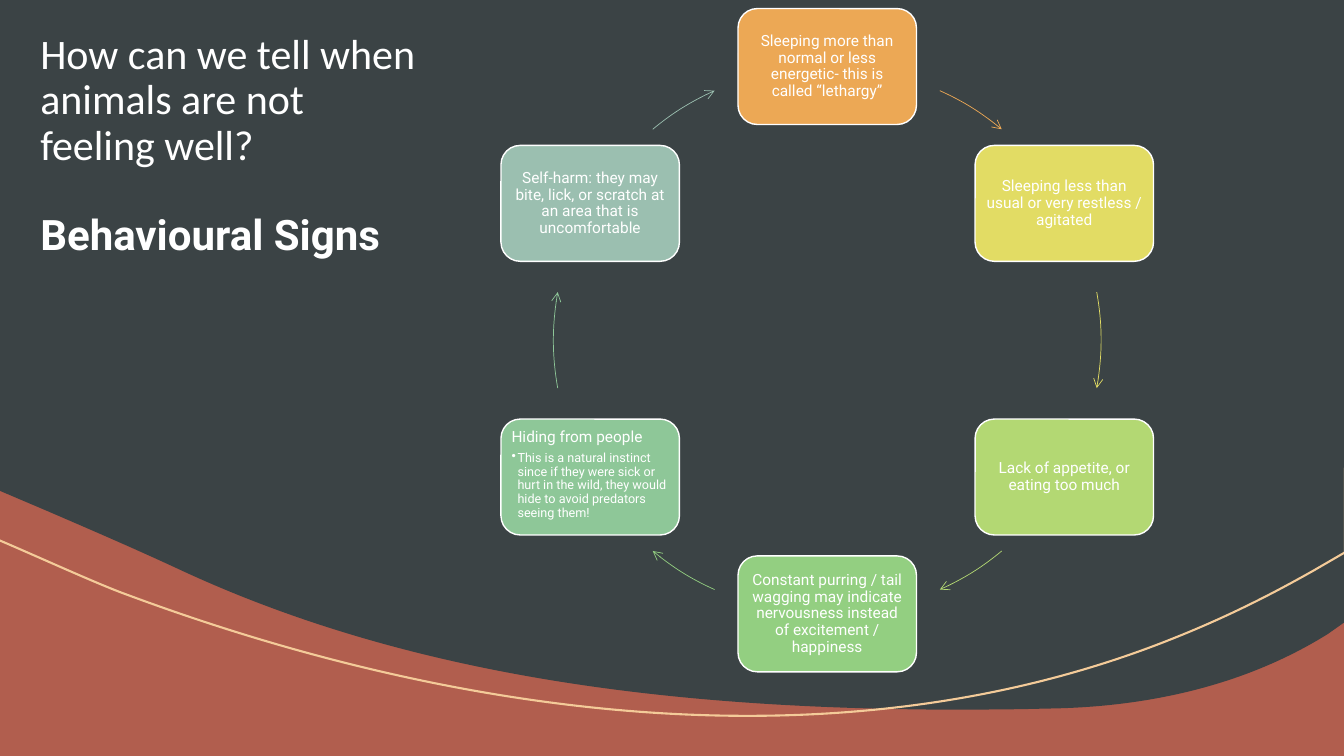
import math
from dataclasses import dataclass

from lxml import etree
from pptx import Presentation
from pptx import util as u
from pptx.dml import color
from pptx.enum import shapes, text
from pptx.oxml import ns

Point = tuple[float, float]
Segment = list[Point]


@dataclass
class Frame:
    left: float
    top: float
    width: float
    height: float


@dataclass
class Sign:
    label: str
    fill: str
    arrow_start: float
    arrow_end: float
    detail: str = ""


SLIDE = Frame(0, 0, 13.33, 7.5)
RING = Frame(5.49, 0.66, 5.43, 5.43)
RADIUS = RING.width / 2
BOX_WIDTH, BOX_HEIGHT = 1.77, 1.15
LABEL_WIDTH, LABEL_HEIGHT = 1.66, 1.04
WHITE, DARK, RED, SAND = "FFFFFF", "3B4345", "B15E4E", "F4CB99"

SIGNS = [
    Sign("Sleeping more than normal or less energetic- this is called “lethargy”",
         "ECA855", 24.3, 39.6),
    Sign("Sleeping less than usual or very restless / agitated", "E2DC64", 79.9, 100.1),
    Sign("Lack of appetite, or eating too much", "B3D873", 140.4, 155.7),
    Sign("Constant purring / tail wagging may indicate nervousness instead of "
         "excitement / happiness", "93CF81", 204.3, 219.6),
    Sign("Hiding from people", "8EC798", 259.9, 280.1,
         "This is a natural instinct since if they were sick or hurt in the wild, "
         "they would hide to avoid predators seeing them!"),
    Sign("Self-harm: they may bite, lick, or scratch at an area that is uncomfortable",
         "9BBFB0", 320.4, 335.7),
]

HILL_FRAME = Frame(0, 0, 13.34, 7.04)
HILL: list[Segment] = [
    [(0, 0)], [(13.34, 0)], [(13.34, 6.17)], [(13.17, 6.29)],
    [(12.32, 6.82), (11.33, 7.02), (10.37, 7.03)],
    [(10.02, 7.04), (9.66, 7.04), (9.3, 7.04)],
    [(6.77, 7.02), (4.14, 6.75), (1.78, 5.65)],
    [(1.35, 5.45), (0.91, 5.26), (0.47, 5.07)],
    [(0, 4.87)],
]
SWOOSH_FRAME = Frame(-0.03, 4.64, 13.37, 2.47)
SWOOSH: list[Segment] = [
    [(13.34, 4.64)], [(13.34, 5.48)], [(13.03, 5.66)],
    [(12.64, 5.88), (12.2, 6.11), (11.62, 6.34)],
    [(8.41, 7.62), (4.65, 7.16), (1.26, 5.9)],
    [(0.98, 5.8), (0.37, 5.52), (-0.03, 5.35)],
]


def rgb(value: str) -> color.RGBColor:
    return color.RGBColor.from_string(value)


def on_ring(degrees: float) -> Point:
    angle = math.radians(degrees)
    return (RING.left + RADIUS * (1 + math.sin(angle)),
            RING.top + RADIUS * (1 - math.cos(angle)))


def ring_arc(start: float, end: float) -> list[Segment]:
    first, last = math.radians(start), math.radians(end)
    reach = RADIUS * 4 / 3 * math.tan((last - first) / 4)
    (x1, y1), (x2, y2) = on_ring(start), on_ring(end)
    return [[(x1, y1)],
            [(x1 + reach * math.cos(first), y1 + reach * math.sin(first)),
             (x2 - reach * math.cos(last), y2 - reach * math.sin(last)), (x2, y2)]]


def centered(center: Point, width: float, height: float) -> list[int]:
    x, y = center
    return [u.Inches(value) for value in (x - width / 2, y - height / 2, width, height)]


def paint(shape, *, fill: str = "", line: str = "", width: float = 1) -> None:
    shape.shadow.inherit = False
    if fill:
        shape.fill.solid()
        shape.fill.fore_color.rgb = rgb(fill)
    else:
        shape.fill.background()
    if line:
        shape.line.color.rgb = rgb(line)
        shape.line.width = u.Pt(width)
    else:
        shape.line.fill.background()


def add_outline(slide, frame: Frame, segments: list[Segment], *, fill: str = "",
                line: str = "", width: float = 1, arrow: bool = False):
    left, top = u.Inches(frame.left), u.Inches(frame.top)
    right, bottom = left + u.Inches(frame.width), top + u.Inches(frame.height)
    builder = slide.shapes.build_freeform(left, top)
    builder.add_line_segments([(right, bottom)], close=False)
    shape = builder.convert_to_shape()
    outline = next(shape._element.iter(ns.qn("a:path")))
    for child in list(outline):
        outline.remove(child)
    for index, segment in enumerate(segments):
        command = "moveTo" if index == 0 else "cubicBezTo" if len(segment) == 3 else "lnTo"
        step = etree.SubElement(outline, ns.qn(f"a:{command}"))
        for x, y in segment:
            etree.SubElement(step, ns.qn("a:pt"), x=str(u.Inches(x) - left),
                             y=str(u.Inches(y) - top))
    if fill:
        etree.SubElement(outline, ns.qn("a:close"))
    paint(shape, fill=fill, line=line, width=width)
    if arrow:
        etree.SubElement(shape.line._get_or_add_ln(), ns.qn("a:tailEnd"), type="arrow")
    return shape


def write(paragraph, wording: str, *, size: float, font: str = "Roboto",
          bold: bool = False, align=text.PP_ALIGN.LEFT, before: float = 0,
          after: float = 0, bullet: str = "") -> None:
    if bullet:
        properties = paragraph._p.get_or_add_pPr()
        properties.set("marL", str(u.Inches(0.06)))
        properties.set("indent", str(-u.Inches(0.06)))
        etree.SubElement(properties, ns.qn("a:buChar"), char=bullet)
        paragraph.level = 1
    paragraph.alignment = align
    paragraph.line_spacing = 0.9
    paragraph.space_before = u.Pt(before)
    paragraph.space_after = u.Pt(after)
    run = paragraph.add_run()
    run.text = wording
    run.font.name = font
    run.font.size = u.Pt(size)
    run.font.bold = bold
    run.font.color.rgb = rgb(WHITE)


def add_title(slide) -> None:
    title = slide.shapes.title
    title.left, title.top = u.Inches(0.3), u.Inches(0.28)
    title.width, title.height = u.Inches(3.94), u.Inches(2.5)
    frame = title.text_frame
    frame.word_wrap = True
    frame.auto_size = text.MSO_AUTO_SIZE.NONE
    frame.vertical_anchor = text.MSO_ANCHOR.TOP
    write(frame.paragraphs[0], "How can we tell when animals are not feeling well?",
          size=30, font="Calibri")
    write(frame.add_paragraph(), "Behavioural Signs", size=30, bold=True, before=32)


def add_sign(slide, sign: Sign, degrees: float) -> None:
    center = on_ring(degrees)
    box = slide.shapes.add_shape(shapes.MSO_SHAPE.ROUNDED_RECTANGLE,
                                 *centered(center, BOX_WIDTH, BOX_HEIGHT))
    paint(box, fill=sign.fill, line=WHITE)

    label = slide.shapes.add_textbox(*centered(center, LABEL_WIDTH, LABEL_HEIGHT))
    frame = label.text_frame
    frame.word_wrap = True
    frame.margin_left = frame.margin_right = u.Inches(0.05)
    frame.margin_top = frame.margin_bottom = u.Inches(0.05)
    frame.vertical_anchor = text.MSO_ANCHOR.TOP if sign.detail else text.MSO_ANCHOR.MIDDLE
    align = text.PP_ALIGN.LEFT if sign.detail else text.PP_ALIGN.CENTER
    write(frame.paragraphs[0], sign.label, size=11, align=align,
          after=3.85 if sign.detail else 0)
    if sign.detail:
        write(frame.add_paragraph(), sign.detail, size=9, bullet="•")

    add_outline(slide, RING, ring_arc(sign.arrow_start, sign.arrow_end),
                line=sign.fill, width=0.5, arrow=True)


def main() -> None:
    presentation = Presentation()
    presentation.slide_width = u.Inches(SLIDE.width)
    presentation.slide_height = u.Inches(SLIDE.height)
    slide = presentation.slides.add_slide(presentation.slide_layouts[5])
    slide.background.fill.solid()
    slide.background.fill.fore_color.rgb = rgb(RED)

    ground = slide.shapes.add_shape(shapes.MSO_SHAPE.RECTANGLE, 0, 0,
                                    presentation.slide_width, presentation.slide_height)
    paint(ground, fill=RED)
    hill = add_outline(slide, HILL_FRAME, HILL, fill=DARK)
    swoosh = add_outline(slide, SWOOSH_FRAME, SWOOSH, line=SAND, width=1.5)
    for backdrop in (ground, hill, swoosh):
        slide.shapes.title._element.addprevious(backdrop._element)

    add_title(slide)
    for index, sign in enumerate(SIGNS):
        add_sign(slide, sign, index * 360 / len(SIGNS))
    presentation.save("out.pptx")


if __name__ == "__main__":
    main()
